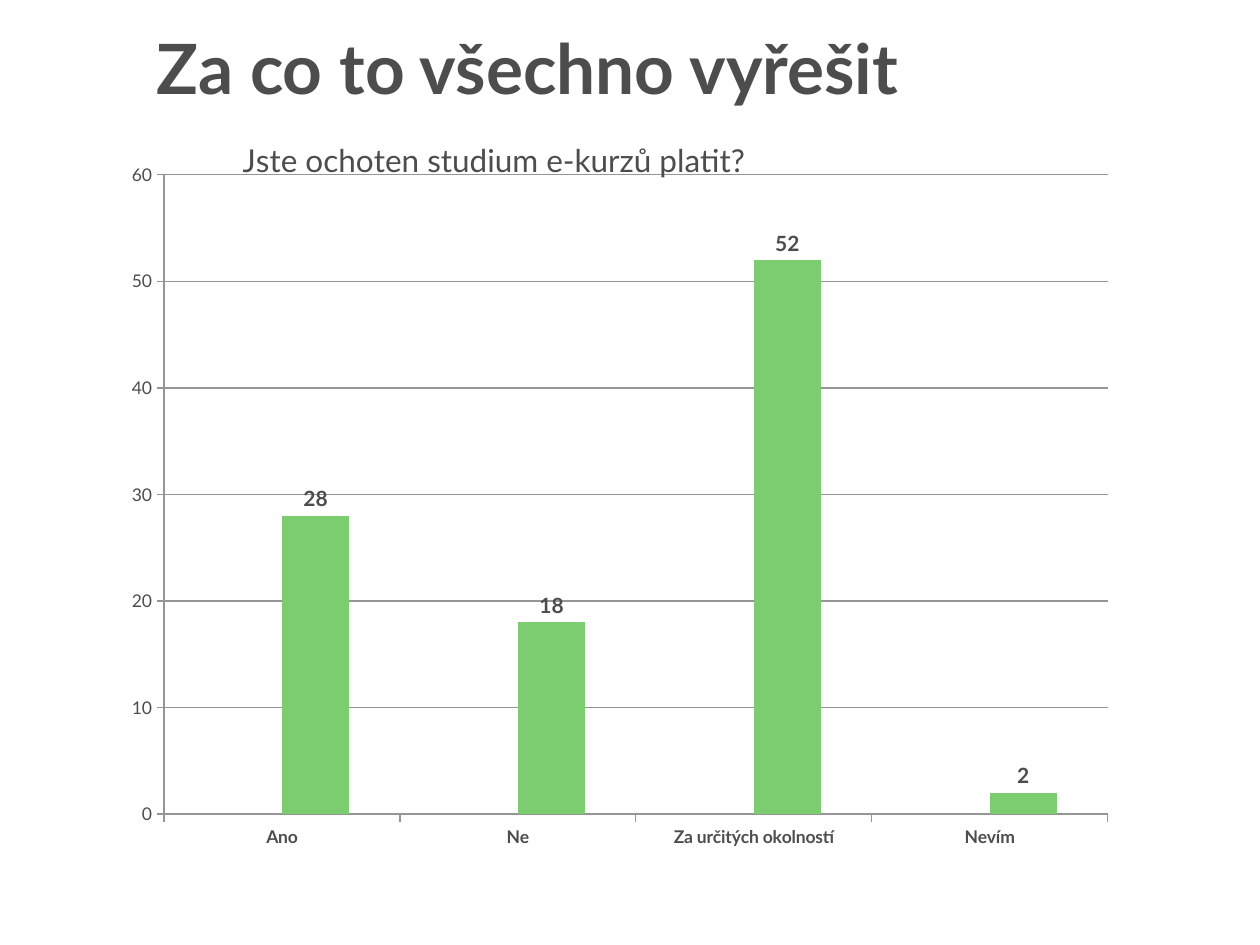
from pptx import Presentation
from pptx.chart.data import CategoryChartData
from pptx.dml.color import RGBColor
from pptx.enum.chart import XL_CHART_TYPE as ChartType, XL_LABEL_POSITION as LabelPos, XL_TICK_MARK as Tick
from pptx.enum.text import MSO_ANCHOR
from pptx.oxml import parse_xml
from pptx.oxml.ns import nsdecls, qn
from pptx.util import Pt

PX = 914400 // 126
FONT = "Lato"
INK = RGBColor(0x4D, 0x4D, 0x4D)
LINE = RGBColor(0x95, 0x95, 0x95)
WHITE = RGBColor(0xFF, 0xFF, 0xFF)

TITLE = "Za co to všechno vyřešit"
QUESTION = "Jste ochoten studium e-kurzů platit?"
ANSWERS = ["Ano", "Ne", "Za určitých okolností", "Nevím"]
SERIES = [
    ("Series 1", [None] * 4, RGBColor(0x5D, 0xBF, 0x62)),
    ("Series 2", [28, 18, 52, 2], RGBColor(0x7C, 0xCD, 0x6F)),
]
TITLE_BOX = (144, 18, 1008, 98)
CHART_BOX = (-10, 123, 1235, 824)
QUESTION_AT = {"x": 0.2, "y": 0.01}
PLOT_AT = {"x": 0.141, "y": 0.063, "w": 0.764, "h": 0.776}


def style(font, size, bold=False):
    """Apply the slide's typeface and ink."""
    font.name, font.size, font.bold = FONT, Pt(size), bold
    font.color.rgb = INK


def place(element, index, at, target=""):
    """Give a chart part a manual layout."""
    for old in element.findall(qn("c:layout")):
        element.remove(old)
    modes = "".join(f'<c:{k}Mode val="edge"/>' for k in "xy")
    sizes = "".join(f'<c:{k} val="{v}"/>' for k, v in at.items())
    element.insert(index, parse_xml(
        f'<c:layout {nsdecls("c")}><c:manualLayout>{target}{modes}{sizes}</c:manualLayout></c:layout>'))


def add_answers_chart(slide):
    """Add the column chart of answers."""
    data = CategoryChartData()
    data.categories = ANSWERS
    for name, values, _ in SERIES:
        data.add_series(name, values)
    box = [v * PX for v in CHART_BOX]
    chart = slide.shapes.add_chart(ChartType.COLUMN_CLUSTERED, *box, data).chart
    style(chart.font, 10)
    chart.has_legend = False

    tf = chart.chart_title.text_frame
    tf.text = QUESTION
    style(tf.paragraphs[0].runs[0].font, 18)
    place(chart.chart_title._element, 1, QUESTION_AT)
    plot_area = chart._chartSpace.chart.plotArea
    place(plot_area, 0, PLOT_AT, '<c:layoutTarget val="inner"/>')

    plot = chart.plots[0]
    plot.gap_width, plot.overlap, plot.vary_by_categories = 150, 0, False
    for series, (_, _, color) in zip(plot.series, SERIES):
        series.format.fill.solid()
        series.format.fill.fore_color.rgb = color
        labels = series.data_labels
        labels.show_value = True
        labels.position = LabelPos.OUTSIDE_END
        style(labels.font, 12, True)

    value_axis = chart.value_axis
    value_axis.minimum_scale, value_axis.maximum_scale, value_axis.major_unit = 0, 60, 10
    value_axis.has_major_gridlines = True
    value_axis.major_gridlines.format.line.color.rgb = LINE
    for axis, bold in ((chart.category_axis, True), (value_axis, False)):
        axis.major_tick_mark, axis.minor_tick_mark = Tick.OUTSIDE, Tick.NONE
        axis.format.line.color.rgb = LINE
        style(axis.tick_labels.font, 10, bold)


def add_title(slide):
    """Add the slide heading."""
    tf = slide.shapes.add_textbox(*[v * PX for v in TITLE_BOX]).text_frame
    tf.word_wrap = True
    tf.vertical_anchor = MSO_ANCHOR.MIDDLE
    tf.text = TITLE
    style(tf.paragraphs[0].runs[0].font, 39.6, True)


def main():
    """Build the slide."""
    prs = Presentation()
    prs.slide_width, prs.slide_height = 1260 * PX, 945 * PX
    slide = prs.slides.add_slide(prs.slide_layouts[6])
    slide.background.fill.solid()
    slide.background.fill.fore_color.rgb = WHITE
    add_answers_chart(slide)
    add_title(slide)
    prs.save("out.pptx")


if __name__ == "__main__":
    main()
